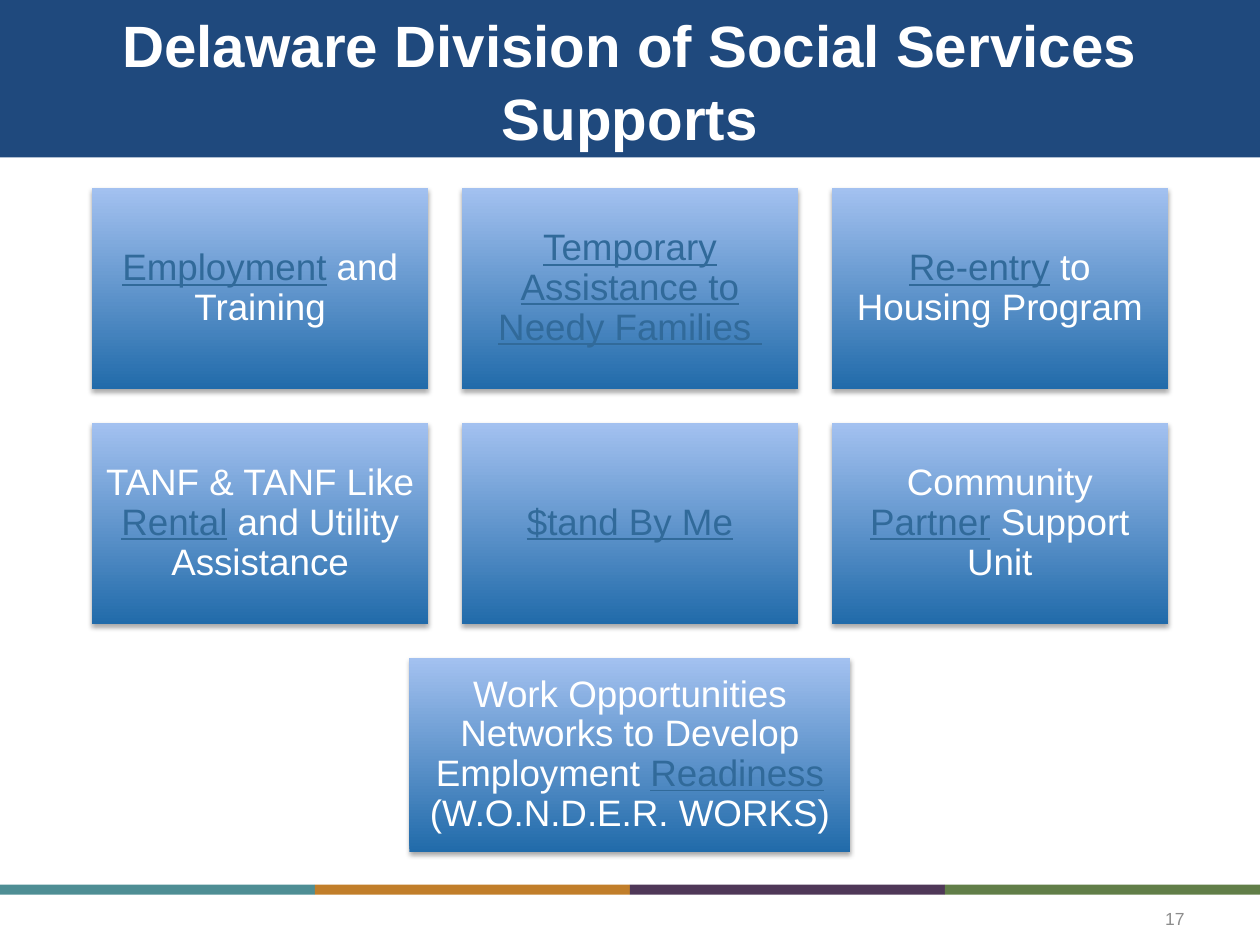
from lxml import etree
from pptx import Presentation
from pptx.dml.color import RGBColor
from pptx.enum.shapes import MSO_SHAPE
from pptx.enum.text import MSO_ANCHOR, MSO_AUTO_SIZE, PP_ALIGN
from pptx.oxml.ns import qn
from pptx.util import Inches, Pt

WHITE, LINK = "FFFFFF", "316A9A"
STRIPES = ["4E8E94", "C17E2A", "4F3858", "617E48"]
GRADIENT = ["216BAA", "A3C1F0"]  # bottom, top

# Each card is a list of (text, is_link) pieces.
GRID_CARDS = [
    [("Employment", True), (" and Training", False)],
    [("Temporary Assistance to Needy Families ", True)],
    [("Re-entry", True), (" to Housing Program", False)],
    [("TANF & TANF Like ", False), ("Rental", True),
     (" and Utility Assistance", False)],
    [("$tand By Me", True)],
    [("Community ", False), ("Partner", True), (" Support Unit", False)],
]
WONDER_CARD = [
    ("Work Opportunities Networks to Develop Employment ", False),
    ("Readiness", True), (" (W.O.N.D.E.R. WORKS)", False),
]


def rgb(value):
    return RGBColor.from_string(value)


def set_attrs(obj, values):
    for name, value in values.items():
        setattr(obj, name, value)


def place(sp, left, top, width, height):
    set_attrs(sp, {"left": Inches(left), "top": Inches(top),
                   "width": Inches(width), "height": Inches(height)})


def add_run(p, text, size, color, **font):
    r = p.add_run()
    r.text = text
    set_attrs(r.font, {"name": "Arial", "size": Pt(size), **font})
    r.font.color.rgb = rgb(color)


def add_rect(slide, left, top, width, height):
    sp = slide.shapes.add_shape(
        MSO_SHAPE.RECTANGLE, Inches(left), Inches(top),
        Inches(width), Inches(height))
    sp.line.fill.background()
    sp.shadow.inherit = False
    return sp


def add_stripes(slide):
    width = 10 / len(STRIPES)
    for i, color in enumerate(STRIPES):
        sp = add_rect(slide, i * width, 7.02, width, 0.08)
        sp.fill.solid()
        sp.fill.fore_color.rgb = rgb(color)


def add_title(slide, text):
    sp = slide.shapes.title
    place(sp, 0, 0, 10, 1.25)
    sp.fill.solid()
    sp.fill.fore_color.rgb = rgb("1F497D")
    tf = sp.text_frame
    set_attrs(tf, {"word_wrap": True, "auto_size": MSO_AUTO_SIZE.NONE,
                   "vertical_anchor": MSO_ANCHOR.MIDDLE})
    p = tf.paragraphs[0]
    set_attrs(p, {"alignment": PP_ALIGN.CENTER, "line_spacing": 1.05})
    add_run(p, text, 33.3, WHITE, bold=True)


def add_drop_shadow(sp):
    effects = sp.element.spPr.find(qn("a:effectLst"))
    shadow = etree.SubElement(
        effects, qn("a:outerShdw"), blurRad=str(Pt(3.1)), dist=str(Pt(1.8)),
        dir="5400000", rotWithShape="0")
    color = etree.SubElement(shadow, qn("a:srgbClr"), val="000000")
    etree.SubElement(color, qn("a:alpha"), val="35000")


def add_card(slide, pieces, left, top, width, height):
    sp = add_rect(slide, left, top, width, height)
    sp.fill.gradient()
    sp.fill.gradient_angle = 90
    for stop, color in zip(sp.fill.gradient_stops, GRADIENT):
        stop.color.rgb = rgb(color)
    add_drop_shadow(sp)
    tf = sp.text_frame
    inset = Inches(0.09)
    set_attrs(tf, {"word_wrap": True, "vertical_anchor": MSO_ANCHOR.MIDDLE,
                   "margin_left": inset, "margin_right": inset,
                   "margin_top": inset, "margin_bottom": inset})
    p = tf.paragraphs[0]
    set_attrs(p, {"alignment": PP_ALIGN.CENTER, "line_spacing": 0.9})
    for text, is_link in pieces:
        add_run(p, text, 21, LINK if is_link else WHITE, underline=is_link)


def add_page_number(slide, text):
    sp = slide.shapes.add_textbox(
        Inches(7.17), Inches(7.09), Inches(2.33), Inches(0.4))
    tf = sp.text_frame
    set_attrs(tf, {"word_wrap": True, "vertical_anchor": MSO_ANCHOR.MIDDLE})
    p = tf.paragraphs[0]
    p.alignment = PP_ALIGN.RIGHT
    add_run(p, text, 10, "8C8C8C")


def main():
    prs = Presentation()
    set_attrs(prs, {"slide_width": Inches(10), "slide_height": Inches(7.5)})
    slide = prs.slides.add_slide(prs.slide_layouts[5])
    add_stripes(slide)
    add_title(slide, "Delaware Division of Social Services Supports")
    add_page_number(slide, "17")

    width, height, gap = 2.67, 1.6, 0.265
    for i, pieces in enumerate(GRID_CARDS):
        row, col = divmod(i, 3)
        add_card(slide, pieces, 0.73 + col * (width + gap),
                 1.49 + row * (height + gap), width, height)
    add_card(slide, WONDER_CARD, 3.25, 5.22, 3.5, 1.54)
    prs.save("out.pptx")


if __name__ == "__main__":
    main()
